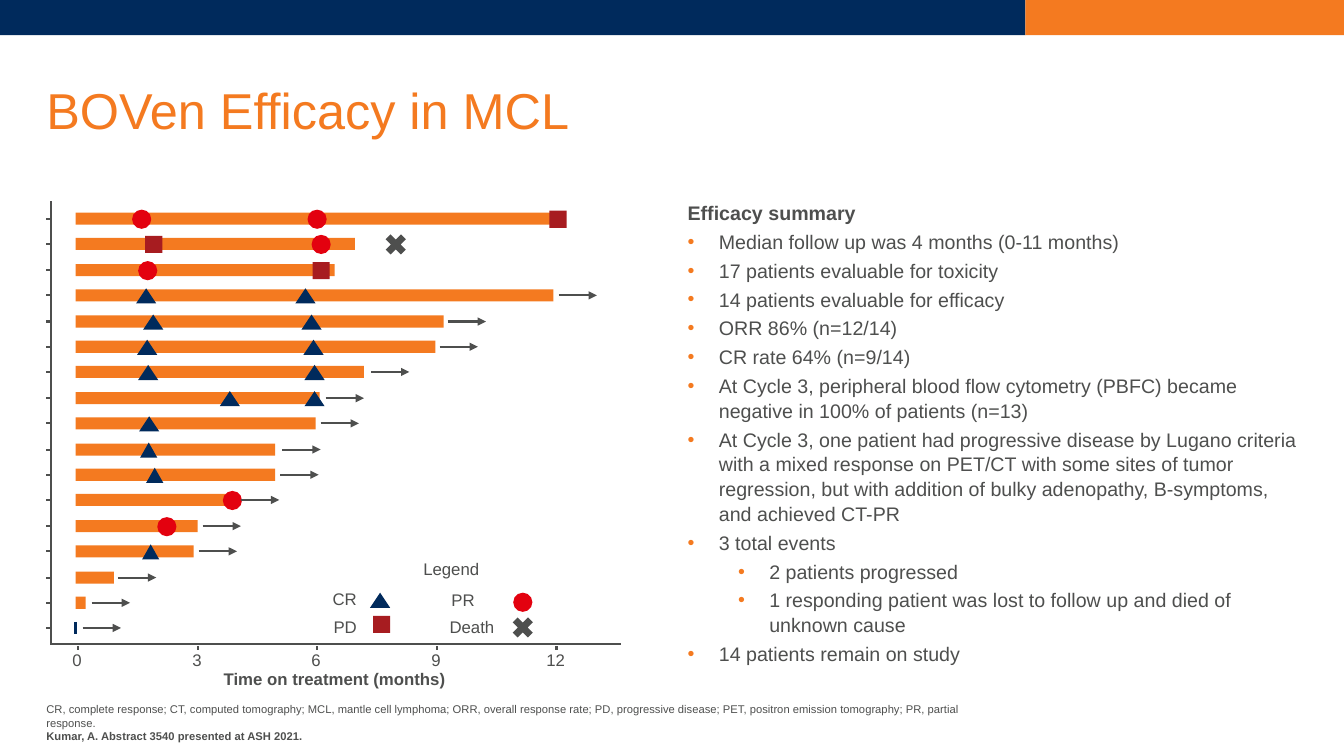
"""Build the slide on BOVen efficacy in MCL with a swimmer plot and a summary list."""
from lxml import etree
from pptx import Presentation
from pptx.dml.color import RGBColor
from pptx.enum.shapes import MSO_CONNECTOR, MSO_SHAPE
from pptx.enum.text import MSO_ANCHOR, MSO_AUTO_SIZE, PP_ALIGN
from pptx.oxml.ns import qn
from pptx.util import Pt

PX = 9144
RECT, OVAL = MSO_SHAPE.RECTANGLE, MSO_SHAPE.OVAL
TRIANGLE, CROSS = MSO_SHAPE.ISOSCELES_TRIANGLE, MSO_SHAPE.MATH_MULTIPLY
STRAIGHT = MSO_CONNECTOR.STRAIGHT
TOP, MIDDLE, BOTTOM = MSO_ANCHOR.TOP, MSO_ANCHOR.MIDDLE, MSO_ANCHOR.BOTTOM
LEFT, NO_FIT = PP_ALIGN.LEFT, MSO_AUTO_SIZE.NONE
NAVY, ORANGE, GREY, RED, MAROON = "002A5C", "F47A20", "4E4F4E", "E3010F", "A71C20"

MARKERS = {
    "CR": (TRIANGLE, 20, 15, NAVY),
    "narrow CR": (TRIANGLE, 17, 15, NAVY),
    "PR": (OVAL, 19, 19, RED),
    "PD": (RECT, 17, 17, MAROON),
    "Death": (CROSS, 29, 29, GREY),
}
PATIENTS = [
    (561, None, [("PR", 314), ("PR", 140), ("PD", 553)]),
    (352, None, [("PR", 318), ("PD", 152), ("Death", 392)]),
    (332, None, [("PD", 318), ("PR", 146)]),
    (549, 554, [("CR", 145), ("CR", 303)]),
    (440, 444, [("CR", 152), ("CR", 309)]),
    (432, 436, [("CR", 146), ("CR", 311)]),
    (361, 368, [("CR", 147), ("CR", 312)]),
    (317, 323, [("CR", 228), ("CR", 312)]),
    (313, 318, [("CR", 148)]),
    (273, 280, [("narrow CR", 147)]),
    (273, 278, [("narrow CR", 153)]),
    (237, 239, [("PR", 230)]),
    (196, 201, [("PR", 165)]),
    (192, 197, [("narrow CR", 149)]),
    (113, 117, []),
    (85, 91, []),
    (None, 82, []),
]
SUMMARY = [
    (0, "Median follow up was 4 months (0-11 months)"),
    (0, "17 patients evaluable for toxicity"),
    (0, "14 patients evaluable for efficacy"),
    (0, "ORR 86% (n=12/14)"),
    (0, "CR rate 64% (n=9/14)"),
    (0, "At Cycle 3, peripheral blood flow cytometry (PBFC) became negative in 100% of patients (n=13)"),
    (0, "At Cycle 3, one patient had progressive disease by Lugano criteria with a mixed response "
        "on PET/CT with some sites of tumor regression, but with addition of bulky adenopathy, "
        "B-symptoms, and achieved CT-PR"),
    (0, "3 total events"),
    (1, "2 patients progressed"),
    (1, "1 responding patient was lost to follow up and died of unknown cause"),
    (0, "14 patients remain on study"),
]
FOOTNOTE = ("CR, complete response; CT, computed tomography; MCL, mantle cell lymphoma; "
            "ORR, overall response rate; PD, progressive disease; PET, positron emission "
            "tomography; PR, partial response.")


def paint(fill, colour):
    fill.solid()
    fill.fore_color.rgb = RGBColor.from_string(colour)


def write(para, text, size=12, colour=GREY, bold=False):
    para.alignment = LEFT
    span = para.add_run()
    span.text = text
    span.font.name = "Arial"
    span.font.size = Pt(size)
    span.font.bold = bold
    paint(span.font.fill, colour)


deck = Presentation()
deck.slide_width, deck.slide_height = 1333 * PX, 750 * PX
page = deck.slides.add_slide(deck.slide_layouts[1])
title, body = page.placeholders
footer = page.shapes.add_textbox(0, 0, PX, PX)

for box, left, top, width, height, anchor in [
    (title, 46, 40, 1243, 145, MIDDLE),
    (body, 682, 198, 606, 480, TOP),
    (footer, 46, 695, 937, 42, BOTTOM),
]:
    box.left, box.top, box.width, box.height = left * PX, top * PX, width * PX, height * PX
    frame = box.text_frame
    frame.margin_left = frame.margin_right = frame.margin_top = frame.margin_bottom = 0
    frame.word_wrap = True
    frame.auto_size = NO_FIT
    frame.vertical_anchor = anchor

heading = title.text_frame.paragraphs[0]
heading.line_spacing = 0.9
write(heading, "BOVen Efficacy in MCL", size=36, colour=ORANGE)
write(footer.text_frame.paragraphs[0], FOOTNOTE, size=8)
write(footer.text_frame.add_paragraph(), "Kumar, A. Abstract 3540 presented at ASH 2021.", size=8, bold=True)

for level, text in [(None, "Efficacy summary"), *SUMMARY]:
    is_heading = level is None
    para = body.text_frame.paragraphs[0] if is_heading else body.text_frame.add_paragraph()
    para.level = level or 0
    para.line_spacing = 1.05
    para.space_before, para.space_after = Pt(0), Pt(3)
    properties = para._p.get_or_add_pPr()
    if is_heading:
        properties.set("marL", "0")
        properties.set("indent", "0")
        etree.SubElement(properties, qn("a:buNone"))
    else:
        properties.set("marL", str((31 + 50 * level) * PX))
        properties.set("indent", str(-31 * PX))
        bullet_colour = etree.SubElement(properties, qn("a:buClr"))
        etree.SubElement(bullet_colour, qn("a:srgbClr"), val=ORANGE)
        etree.SubElement(properties, qn("a:buFont"), typeface="Arial")
        etree.SubElement(properties, qn("a:buChar"), char="•")
    write(para, text, size=14, bold=is_heading)

blocks = [(RECT, 0, 0, 1017, 35, NAVY), (RECT, 1017, 0, 316, 35, ORANGE)]
lines = [(50, 639, 616, 639, GREY, 1.5, False), (51, 639, 51, 199, GREY, 1.5, False),
         (75, 617, 75, 629, NAVY, 2.25, False)]
labels = [("Time on treatment (months)", 212, 659, 280), ("Legend", 410, 549, 76),
          ("PR", 438, 580, 44), ("CR", 320, 579, 44), ("PD", 321, 607, 44), ("Death", 436, 607, 65)]
marks = [("CR", 377, 595), ("PR", 518, 597), ("PD", 378, 619), ("Death", 518, 622)]

for row, (bar_end, arrow_start, responses) in enumerate(PATIENTS):
    middle = round(217 + 25.4 * row)
    lines.append((46, middle, 51, middle, GREY, 1.5, False))
    if bar_end:
        blocks.append((RECT, 75, middle - 6, bar_end - 75, 12, ORANGE))
    if arrow_start:
        lines.append((arrow_start, middle, arrow_start + 38, middle, GREY, 1.5, True))
    marks += [(kind, centre, middle) for kind, centre in responses]

for kind, centre, middle in marks:
    outline, width, height, colour = MARKERS[kind]
    blocks.append((outline, centre - width // 2, middle - height // 2, width, height, colour))

for step in range(5):
    tick = round(77 + 118.75 * step)
    month = str(3 * step)
    width = 19 + 10 * len(month)
    lines.append((tick, 641, tick, 645, GREY, 1.5, False))
    labels.append((month, tick - 1 - width // 2, 640, width))

for outline, left, top, width, height, colour in blocks:
    block = page.shapes.add_shape(outline, left * PX, top * PX, width * PX, height * PX)
    block.shadow.inherit = False
    block.line.fill.background()
    paint(block.fill, colour)

for x1, y1, x2, y2, colour, weight, has_arrow in lines:
    line = page.shapes.add_connector(STRAIGHT, x1 * PX, y1 * PX, x2 * PX, y2 * PX)
    line.line.width = Pt(weight)
    paint(line.line.fill, colour)
    properties = line.element.spPr
    if has_arrow:
        etree.SubElement(properties.find(qn("a:ln")), qn("a:tailEnd"), type="triangle")
    etree.SubElement(properties, qn("a:effectLst"))

for text, left, top, width in labels:
    is_axis_title = width > 100
    box = page.shapes.add_textbox(left * PX, top * PX, width * PX, 30 * PX)
    box.text_frame.word_wrap = is_axis_title
    write(box.text_frame.paragraphs[0], text, bold=is_axis_title)

deck.save("out.pptx")
